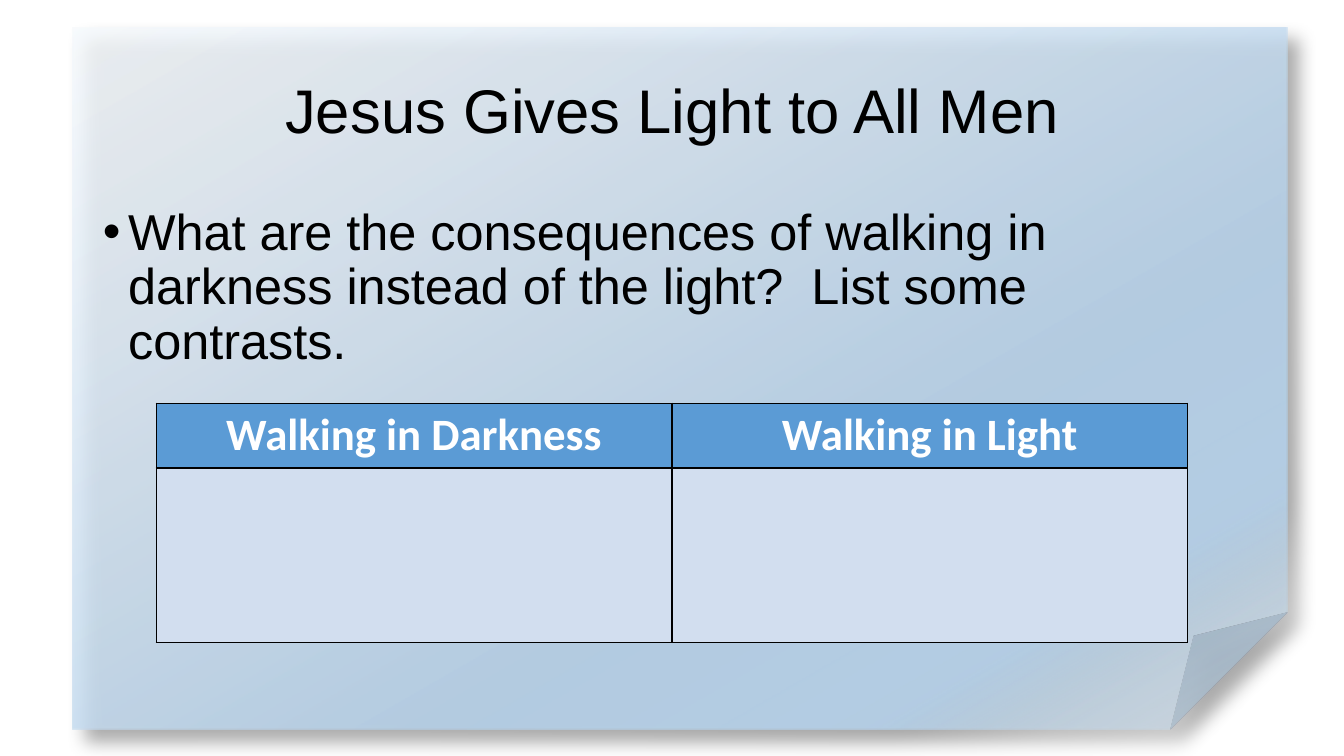
from lxml import etree
from pptx import Presentation
from pptx.dml.color import RGBColor
from pptx.enum import shapes, text
from pptx.oxml import ns, parse_xml
from pptx.util import Inches, Pt

BLACK = RGBColor(0x00, 0x00, 0x00)
WHITE = RGBColor(0xFF, 0xFF, 0xFF)
HEADER_BLUE = RGBColor(0x5B, 0x9B, 0xD5)
CELL_BLUE = RGBColor(0xD2, 0xDE, 0xEF)
# Position %, colour, opacity %
PAPER_STOPS = [
    (0, RGBColor(0xF7, 0xFA, 0xFD), 83),
    (64, RGBColor(0xB5, 0xD2, 0xEC), 82),
    (83, RGBColor(0xB5, 0xD2, 0xEC), 87),
    (89, RGBColor(0xBE, 0xD8, 0xEE), 64),
    (100, RGBColor(0xCE, 0xE1, 0xF2), 44),
]
WIDTH, HEIGHT = Inches(13.33), Inches(7.5)
MARGIN, TEXT_WIDTH = Inches(0.92), Inches(11.5)
HEADERS = ["Walking in Darkness", "Walking in Light"]
ROW_HEIGHTS = [Inches(0.64), Inches(1.73)]


def color_xml(color, opacity):
    return (f'<a:srgbClr val="{color}"><a:alpha val="{opacity * 1000}"/>'
            '</a:srgbClr>')


def add_paper(s):
    """Add the folded sheet behind everything else."""
    sp = s.shapes.add_shape(shapes.MSO_SHAPE.FOLDED_CORNER, Inches(0.72),
                            Inches(0.27), Inches(12.05), Inches(6.97))
    sp.line.fill.background()
    sp.shadow.inherit = False
    stops = "".join(f'<a:gs pos="{pos * 1000}">{color_xml(color, opacity)}</a:gs>'
                    for pos, color, opacity in PAPER_STOPS)
    gradient = parse_xml(
        f'<a:gradFill {ns.nsdecls("a")}><a:gsLst>{stops}</a:gsLst>'
        '<a:lin ang="3600000" scaled="0"/></a:gradFill>')
    shadow = parse_xml(
        f'<a:outerShdw {ns.nsdecls("a")} blurRad="{Pt(13)}" dist="{Pt(13)}" '
        f'dir="2700000" algn="tl" rotWithShape="0">{color_xml(BLACK, 40)}'
        '</a:outerShdw>')
    props = sp._element.spPr
    props.find(ns.qn("a:prstGeom")).addnext(gradient)
    props.find(ns.qn("a:effectLst")).append(shadow)
    s.shapes._spTree.insert(2, sp._element)


def fill_placeholder(sp, words, top, height, size, anchor):
    sp.left, sp.top, sp.width, sp.height = MARGIN, top, TEXT_WIDTH, height
    tf = sp.text_frame
    tf.text = words
    tf.word_wrap = True
    tf.auto_size = text.MSO_AUTO_SIZE.NONE
    tf.vertical_anchor = anchor
    p = tf.paragraphs[0]
    p.line_spacing = 0.9
    p.space_before = Pt(0)
    style_run(p.runs[0], "Arial", size, BLACK)
    return p


def style_run(r, name, size, color, bold=False):
    r.font.name, r.font.size, r.font.bold = name, Pt(size), bold
    r.font.color.rgb = color


def add_bullet(p):
    props = p._p.get_or_add_pPr()
    props.set("marL", str(Inches(0.25)))
    props.set("indent", str(-Inches(0.25)))
    etree.SubElement(props, ns.qn("a:buFont")).set("typeface", "Arial")
    etree.SubElement(props, ns.qn("a:buChar")).set("char", "•")


def paint_cell(cell, color):
    """Give the cell thin black borders and a solid fill."""
    props = cell._tc.get_or_add_tcPr()
    for side in ("lnL", "lnR", "lnT", "lnB"):
        props.append(parse_xml(
            f'<a:{side} {ns.nsdecls("a")} w="{Pt(1)}"><a:solidFill>'
            f'<a:srgbClr val="{BLACK}"/></a:solidFill></a:{side}>'))
    cell.fill.solid()
    cell.fill.fore_color.rgb = color


def add_contrast_table(s):
    frame = s.shapes.add_table(len(ROW_HEIGHTS), len(HEADERS), Inches(1.55),
                               Inches(4), Inches(10.23), sum(ROW_HEIGHTS))
    table = frame.table
    for row, height in zip(table.rows, ROW_HEIGHTS):
        row.height = height
    for col, words in enumerate(HEADERS):
        header = table.cell(0, col)
        header.text = words
        p = header.text_frame.paragraphs[0]
        p.alignment = text.PP_ALIGN.CENTER
        style_run(p.runs[0], "Calibri", 32, WHITE, bold=True)
        paint_cell(header, HEADER_BLUE)
        paint_cell(table.cell(1, col), CELL_BLUE)


def main():
    prs = Presentation()
    prs.slide_width, prs.slide_height = WIDTH, HEIGHT
    s = prs.slides.add_slide(prs.slide_layouts[1])
    add_paper(s)
    title = fill_placeholder(s.shapes.title, "Jesus Gives Light to All Men",
                             Inches(0.4), Inches(1.45), 44,
                             text.MSO_ANCHOR.MIDDLE)
    title.alignment = text.PP_ALIGN.CENTER
    question = fill_placeholder(
        s.placeholders[1],
        "What are the consequences of walking in darkness instead of the "
        "light?  List some contrasts.",
        Inches(2), Inches(4.76), 36, text.MSO_ANCHOR.TOP)
    add_bullet(question)
    add_contrast_table(s)
    prs.save("out.pptx")


if __name__ == "__main__":
    main()
